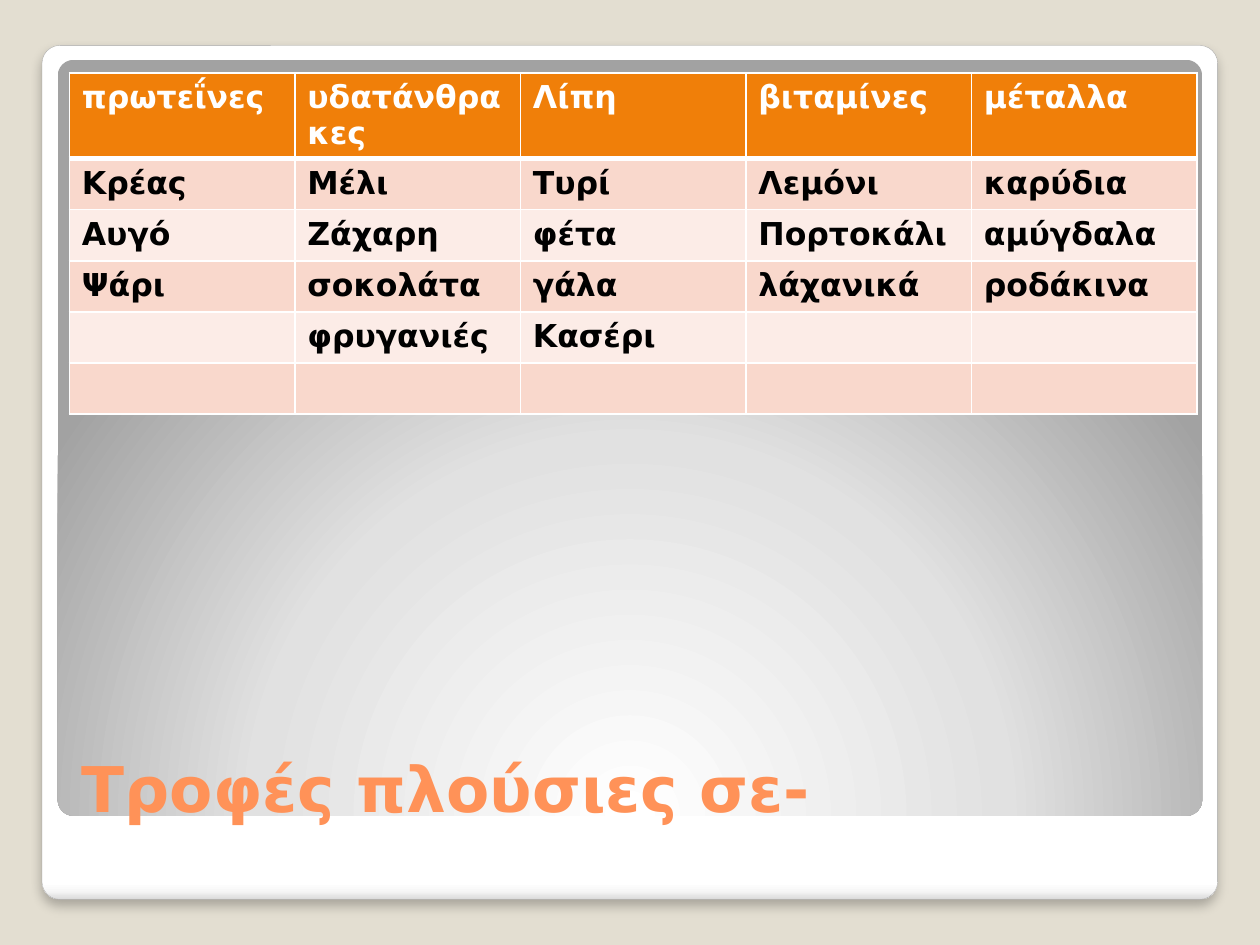
from pptx import Presentation
from pptx.dml.color import RGBColor
from pptx.enum.shapes import MSO_SHAPE
from pptx.enum.text import MSO_ANCHOR, PP_ALIGN
from pptx.oxml import parse_xml
from pptx.oxml.ns import nsdecls, qn
from pptx.util import Pt

FONT = "DejaVu Sans"
HEADER = ["πρωτεΐνες", "υδατάνθρακες", "Λίπη", "βιταμίνες", "μέταλλα"]
FOODS = [
    ["Κρέας", "Μέλι", "Τυρί", "Λεμόνι", "καρύδια"],
    ["Αυγό", "Ζάχαρη", "φέτα", "Πορτοκάλι", "αμύγδαλα"],
    ["Ψάρι", "σοκολάτα", "γάλα", "λάχανικά", "ροδάκινα"],
    ["", "φρυγανιές", "Κασέρι", "", ""],
    ["", "", "", "", ""],
]


def rgb(color):
    return RGBColor.from_string(color)


def add_run(p, text, size, color):
    r = p.add_run()
    r.text = text
    r.font.name = FONT
    r.font.size = Pt(size)
    r.font.bold = True
    r.font.color.rgb = rgb(color)


def set_gradient(sp, stops, direction):
    sp.fill.background()
    spPr = sp._element.spPr
    gs = "".join(
        f'<a:gs pos="{pos * 1000}"><a:srgbClr val="{color}"/></a:gs>'
        for pos, color in stops
    )
    grad = parse_xml(
        f'<a:gradFill {nsdecls("a")} rotWithShape="1">'
        f"<a:gsLst>{gs}</a:gsLst>{direction}</a:gradFill>"
    )
    spPr.replace(spPr.find(qn("a:noFill")), grad)


def add_panel(s, box, stops, direction):
    sp = s.shapes.add_shape(MSO_SHAPE.ROUNDED_RECTANGLE, *map(Pt, box))
    sp.adjustments[0] = 0.021
    sp.shadow.inherit = False
    set_gradient(sp, stops, direction)
    sp.line.fill.background()
    return sp


def add_frame(s, box):
    stops = [(0, "FFFFFF"), (98, "FFFFFF"), (99, "F7F7F7"), (100, "DADADA")]
    sp = add_panel(s, box, stops, '<a:lin ang="5400000" scaled="0"/>')
    sp.line.color.rgb = rgb("A4A4A4")
    sp.line.width = Pt(0.16)
    sp._element.spPr.find(qn("a:effectLst")).append(parse_xml(
        f'<a:outerShdw {nsdecls("a")} blurRad="{Pt(6)}" dist="{Pt(4)}" '
        'dir="5400000" algn="tl" rotWithShape="0">'
        '<a:srgbClr val="000000"><a:alpha val="25000"/></a:srgbClr></a:outerShdw>'
    ))


def add_backdrop(s, box):
    stops = [(0, "FFFFFF"), (55, "E1E1E1"), (100, "A2A2A2")]
    add_panel(
        s, box, stops,
        '<a:path path="circle">'
        '<a:fillToRect l="50000" t="175000" r="50000" b="-75000"/></a:path>',
    )


def place_title(s, box, text):
    title = s.shapes.title
    s.shapes._spTree.append(title._element)
    title.left, title.top, title.width, title.height = map(Pt, box)
    tf = title.text_frame
    tf.word_wrap = True
    tf.vertical_anchor = MSO_ANCHOR.BOTTOM
    p = tf.paragraphs[0]
    p.alignment = PP_ALIGN.LEFT
    add_run(p, text, 36, "FF9258")


def set_borders(cell, widths):
    tcPr = cell._tc.get_or_add_tcPr()
    for i, (side, width) in enumerate(widths.items()):
        tcPr.insert(i, parse_xml(
            f'<a:ln{side} {nsdecls("a")} w="{Pt(width)}"><a:solidFill>'
            f'<a:srgbClr val="FFFFFF"/></a:solidFill></a:ln{side}>'
        ))


def add_food_table(s, box):
    rows = [HEADER] + FOODS
    table = s.shapes.add_table(len(rows), len(HEADER), *map(Pt, box)).table
    table.horz_banding = False
    for col in table.columns:
        col.width = Pt(box[2] / len(HEADER))
    for i, texts in enumerate(rows):
        table.rows[i].height = Pt(29.2)
        fill = "F07F09" if i == 0 else ("FCECE7", "F9D8CC")[i % 2]
        color = "FFFFFF" if i == 0 else "000000"
        top, bottom = 3 if i == 1 else 1, 3 if i == 0 else 1
        for j, text in enumerate(texts):
            cell = table.cell(i, j)
            cell.fill.solid()
            cell.fill.fore_color.rgb = rgb(fill)
            set_borders(cell, {"L": 1, "R": 1, "T": top, "B": bottom})
            if text:
                add_run(cell.text_frame.paragraphs[0], text, 18, color)


def main():
    prs = Presentation()
    prs.slide_width, prs.slide_height = Pt(720), Pt(540)
    s = prs.slides.add_slide(prs.slide_layouts[5])
    s.background.fill.solid()
    s.background.fill.fore_color.rgb = rgb("E3DED1")
    add_frame(s, (24, 26, 671.8, 488))
    add_backdrop(s, (33, 34.2, 654, 432))
    place_title(s, (39.6, 392.4, 644.4, 82.8), "Τροφές πλούσιες σε-")
    add_food_table(s, (39.6, 41.6, 644.4, 175.2))
    prs.save("out.pptx")


if __name__ == "__main__":
    main()
